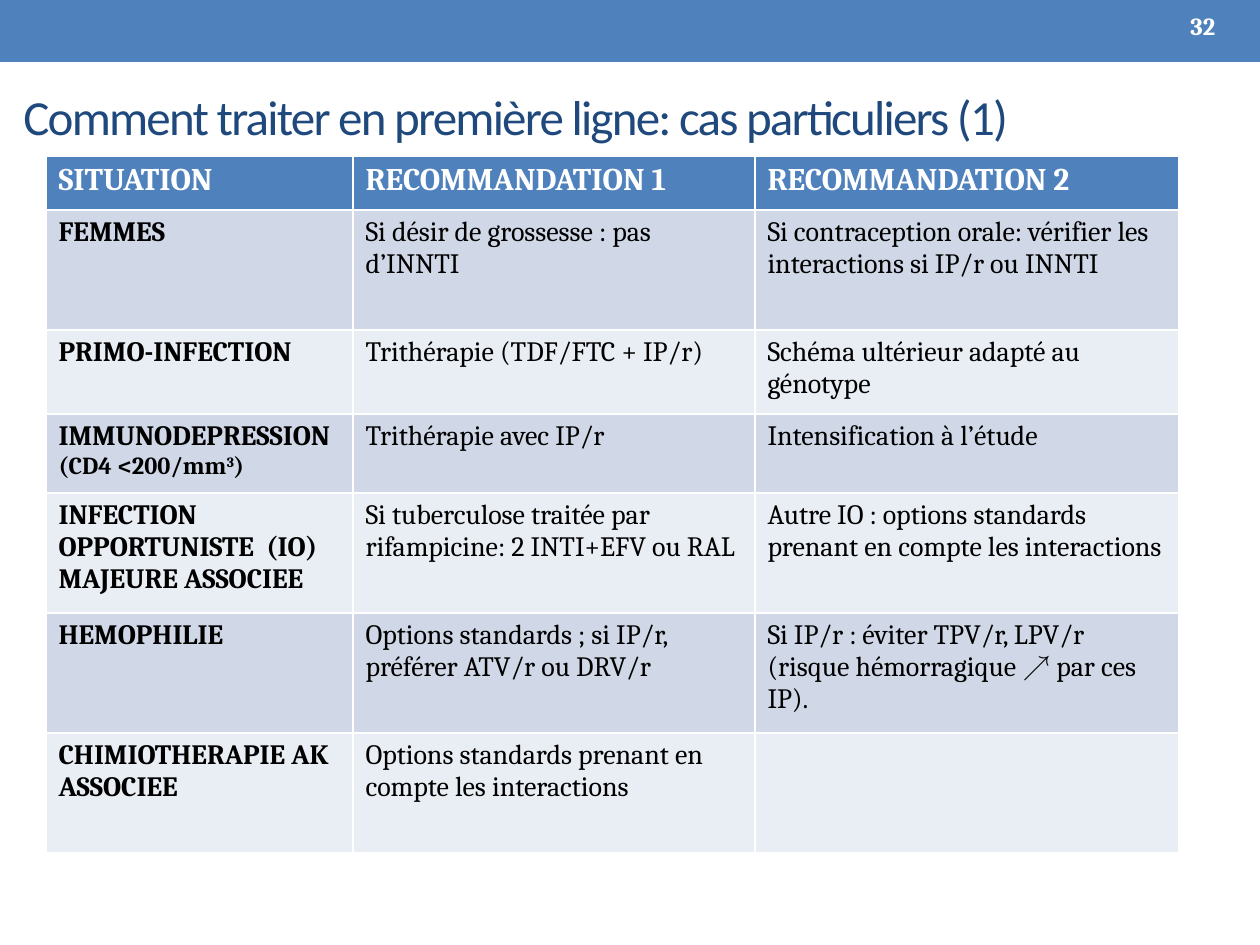
"""Builds a slide on first-line treatment in particular cases."""
from pptx import Presentation
from pptx.dml.color import RGBColor
from pptx.enum.shapes import MSO_SHAPE as Shape
from pptx.enum.text import MSO_ANCHOR as Anchor
from pptx.util import Emu, Pt

BLUE = RGBColor(0x4F, 0x81, 0xBD)
NAVY = RGBColor(0x1F, 0x49, 0x7D)
WHITE = RGBColor(0xFF, 0xFF, 0xFF)
BLACK = RGBColor(0x00, 0x00, 0x00)
BANDS = RGBColor(0xD0, 0xD8, 0xE8), RGBColor(0xE9, 0xED, 0xF4)

COLUMN_WIDTHS = 307, 402, 424
ROW_HEIGHTS = 54, 120, 84, 79, 120, 120, 120
HEADINGS = "SITUATION", "RECOMMANDATION 1", "RECOMMANDATION 2"
CASES = [
    ([("FEMMES", 16, 0)],
     "Si désir de grossesse : pas d’INNTI",
     "Si contraception orale: vérifier les interactions si IP/r ou INNTI"),
    ([("PRIMO-INFECTION", 16, 0)],
     "Trithérapie (TDF/FTC + IP/r)",
     "Schéma ultérieur adapté au génotype"),
    ([("IMMUNODEPRESSION ", 16, 0), ("(CD4 <200/mm", 14, 0), ("3", 14, 30), (")", 14, 0)],
     "Trithérapie avec IP/r",
     "Intensification à l’étude"),
    ([("INFECTION OPPORTUNISTE  (IO) MAJEURE ASSOCIEE", 16, 0)],
     "Si tuberculose traitée par rifampicine: 2 INTI+EFV ou RAL",
     "Autre IO : options standards prenant en compte les interactions"),
    ([("HEMOPHILIE", 16, 0)],
     "Options standards ; si IP/r, préférer ATV/r ou DRV/r",
     "Si IP/r : éviter TPV/r, LPV/r (risque hémorragique ↗ par ces IP)."),
    ([("CHIMIOTHERAPIE AK ASSOCIEE", 16, 0)],
     "Options standards prenant en compte les interactions",
     ""),
]


def px(length):
    """Turn pixels into EMU."""
    return Emu(round(length * 914400 / 126))


def add_run(paragraph, text, size, color, bold=False, face="Cambria"):
    """Append one styled run and return it."""
    run = paragraph.add_run()
    run.text = text
    run.font.size = Pt(size)
    run.font.name = face
    run.font.bold = bold
    run.font.color.rgb = color
    return run


def add_label(slide, box, text, size, color, bold=False, face="Cambria"):
    """Place one vertically centred line of text in the box."""
    frame = slide.shapes.add_textbox(*map(px, box)).text_frame
    frame.word_wrap = True
    frame.vertical_anchor = Anchor.MIDDLE
    return add_run(frame.paragraphs[0], text, size, color, bold, face)


def add_banner(slide, box):
    """Draw the top band with the slide number at its right end."""
    left, top, width, height = box
    band = slide.shapes.add_shape(Shape.RECTANGLE, *map(px, box))
    band.shadow.inherit = False
    band.fill.solid()
    band.fill.fore_color.rgb = BLUE
    band.line.fill.background()
    number_box = left + width - 82, top + 3, 82, height - 17
    add_label(slide, number_box, "32", 14, WHITE, bold=True)


def add_title(slide, box):
    """Write the slide title with tightened letter spacing."""
    title = "Comment traiter en première ligne: cas particuliers (1)"
    run = add_label(slide, box, title, 28, NAVY, face="Calibri")
    run.font._element.set("spc", "-100")


def fill_cell(cell, color):
    """Give the cell a solid fill and return its first paragraph."""
    cell.fill.solid()
    cell.fill.fore_color.rgb = color
    return cell.text_frame.paragraphs[0]


def add_cases_table(slide, left, top):
    """Lay out the situations and their recommendations as a table."""
    size = sum(COLUMN_WIDTHS), sum(ROW_HEIGHTS)
    table = slide.shapes.add_table(
        len(ROW_HEIGHTS), len(COLUMN_WIDTHS), *map(px, (left, top, *size))).table
    for column, width in zip(table.columns, COLUMN_WIDTHS):
        column.width = px(width)
    for row, height in zip(table.rows, ROW_HEIGHTS):
        row.height = px(height)
    for cell, heading in zip(table.rows[0].cells, HEADINGS):
        add_run(fill_cell(cell, BLUE), heading, 18, WHITE, bold=True)
    for index, (situation, *advice) in enumerate(CASES):
        first, *others = table.rows[index + 1].cells
        band = BANDS[index % 2]
        paragraph = fill_cell(first, band)
        for text, points, raised in situation:
            run = add_run(paragraph, text, points, BLACK, bold=True)
            if raised:
                run.font._element.set("baseline", str(raised * 1000))
        for cell, text in zip(others, advice):
            paragraph = fill_cell(cell, band)
            if text:
                add_run(paragraph, text, 16, BLACK)


def main():
    """Build and save the slide."""
    deck = Presentation()
    deck.slide_width, deck.slide_height = px(1260), px(945)
    slide = deck.slides.add_slide(deck.slide_layouts[6])
    add_banner(slide, (0, 0, 1260, 62))
    add_cases_table(slide, 46, 156)
    add_title(slide, (11, 76, 1249, 80))
    deck.save("out.pptx")


if __name__ == "__main__":
    main()
